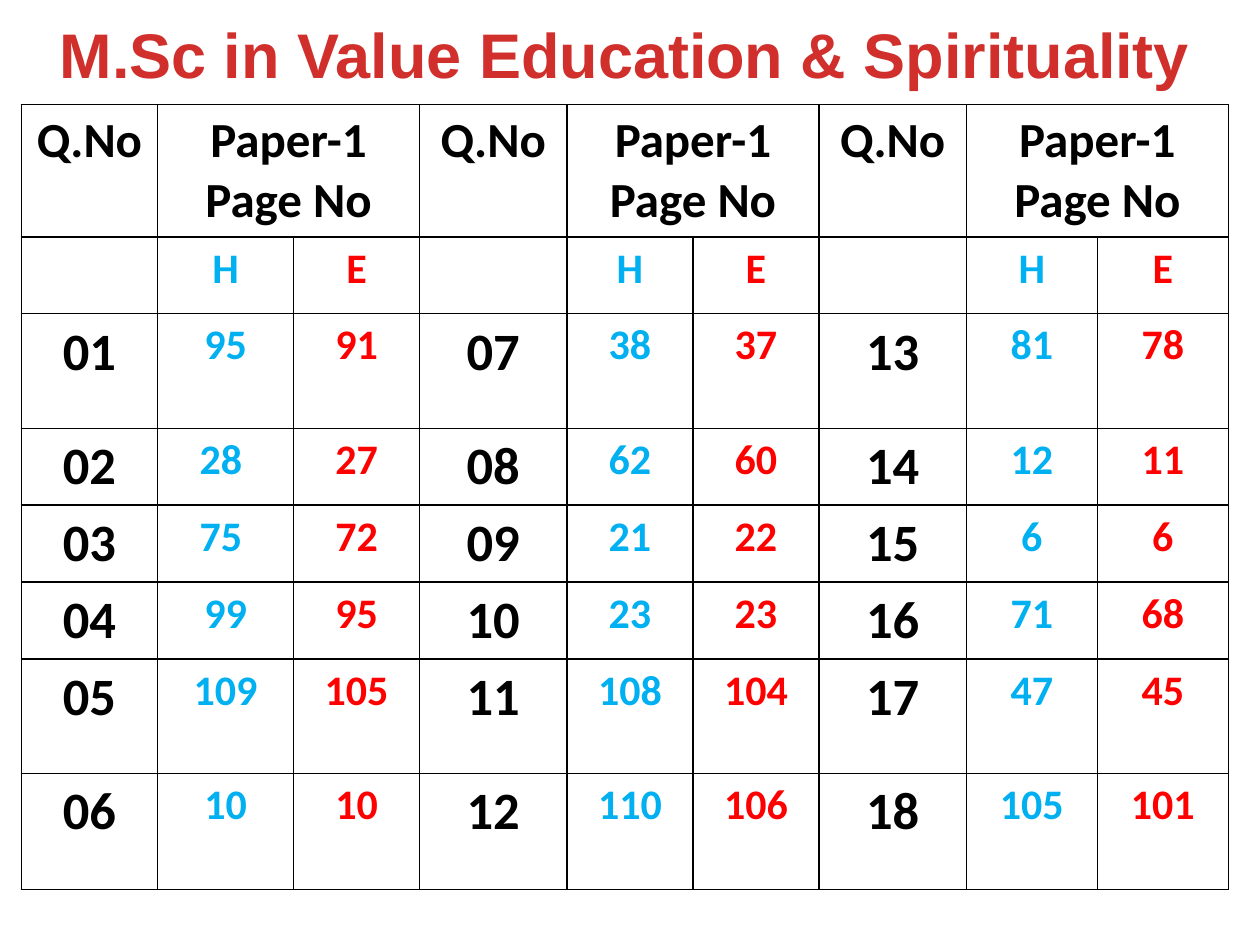
from lxml import etree
from pptx import Presentation
from pptx import util as u
from pptx.dml.color import RGBColor
from pptx.enum import text
from pptx.oxml import ns

COLORS = {"title": "D02F2C", "black": "000000", "hindi": "00B0F0", "english": "FF0000"}
COLUMN_WIDTHS = [1.08, 1.08, 1, 1.17, 1, 1, 1.17, 1.04, 1.04]
ROW_HEIGHTS = [1.05, 0.61, 0.91, 0.61, 0.61, 0.61, 0.91, 0.92]
HEADINGS = ["Q.No", "Paper-1\nPage No", ""] * 3
LANGUAGES = ["", "H", "E"] * 3
PAGES = [
    ("95", "91"), ("28 ", "27"), ("75 ", "72"), ("99", "95"), ("109", "105"), ("10", "10"),
    ("38", "37"), ("62", "60"), ("21", "22"), ("23", "23"), ("108", "104"), ("110", "106"),
    ("81", "78"), ("12", "11"), ("6", "6"), ("71", "68"), ("47", "45"), ("105", "101"),
]
QUESTIONS_PER_GROUP = 6


def write_text(frame, content, size, color, font_name):
    frame.text = content
    for paragraph in frame.paragraphs:
        paragraph.alignment = text.PP_ALIGN.CENTER
        paragraph.font.name = font_name
        paragraph.font.size = u.Pt(size)
        paragraph.font.bold = True
        paragraph.font.color.rgb = RGBColor.from_string(COLORS[color])


def add_title(slide, content):
    box = slide.shapes.add_textbox(u.Inches(0.17), u.Inches(0.17), u.Inches(9.58), u.Inches(0.5))
    frame = box.text_frame
    frame.word_wrap = True
    frame.vertical_anchor = text.MSO_ANCHOR.MIDDLE
    write_text(frame, content, 36, "title", "Arial")


def add_borders(cell):
    properties = cell._tc.get_or_add_tcPr()
    for side in ("lnL", "lnR", "lnT", "lnB"):
        line = etree.SubElement(properties, ns.qn(f"a:{side}"), w=str(u.Pt(1)))
        fill = etree.SubElement(line, ns.qn("a:solidFill"))
        etree.SubElement(fill, ns.qn("a:srgbClr"), val=COLORS["black"])


def question_row(index):
    row = []
    for first in range(0, len(PAGES), QUESTIONS_PER_GROUP):
        number = first + index
        row += [f"{number + 1:02d}", *PAGES[number]]
    return row


def cell_style(row, column):
    if row == 0:
        return 28, "black"
    return [(30, "black"), (24, "hindi"), (24, "english")][column % 3]


def add_page_table(slide):
    rows = [HEADINGS, LANGUAGES] + [question_row(index) for index in range(QUESTIONS_PER_GROUP)]
    table = slide.shapes.add_table(
        len(rows), len(COLUMN_WIDTHS), u.Inches(0.17), u.Inches(0.83),
        u.Inches(sum(COLUMN_WIDTHS)), u.Inches(sum(ROW_HEIGHTS)),
    ).table
    table.first_row = False
    table.horz_banding = False
    for column, width in zip(table.columns, COLUMN_WIDTHS):
        column.width = u.Inches(width)
    for row, height in zip(table.rows, ROW_HEIGHTS):
        row.height = u.Inches(height)
    for row, contents in enumerate(rows):
        for column, content in enumerate(contents):
            cell = table.cell(row, column)
            add_borders(cell)
            cell.fill.background()
            if content:
                size, color = cell_style(row, column)
                write_text(cell.text_frame, content, size, color, "Calibri")
    for column in range(1, len(COLUMN_WIDTHS), 3):
        table.cell(0, column).merge(table.cell(0, column + 1))


def main():
    presentation = Presentation()
    presentation.slide_width = u.Inches(10)
    presentation.slide_height = u.Inches(7.5)
    slide = presentation.slides.add_slide(presentation.slide_layouts[6])
    add_title(slide, "M.Sc in Value Education & Spirituality")
    add_page_table(slide)
    presentation.save("out.pptx")


if __name__ == "__main__":
    main()
